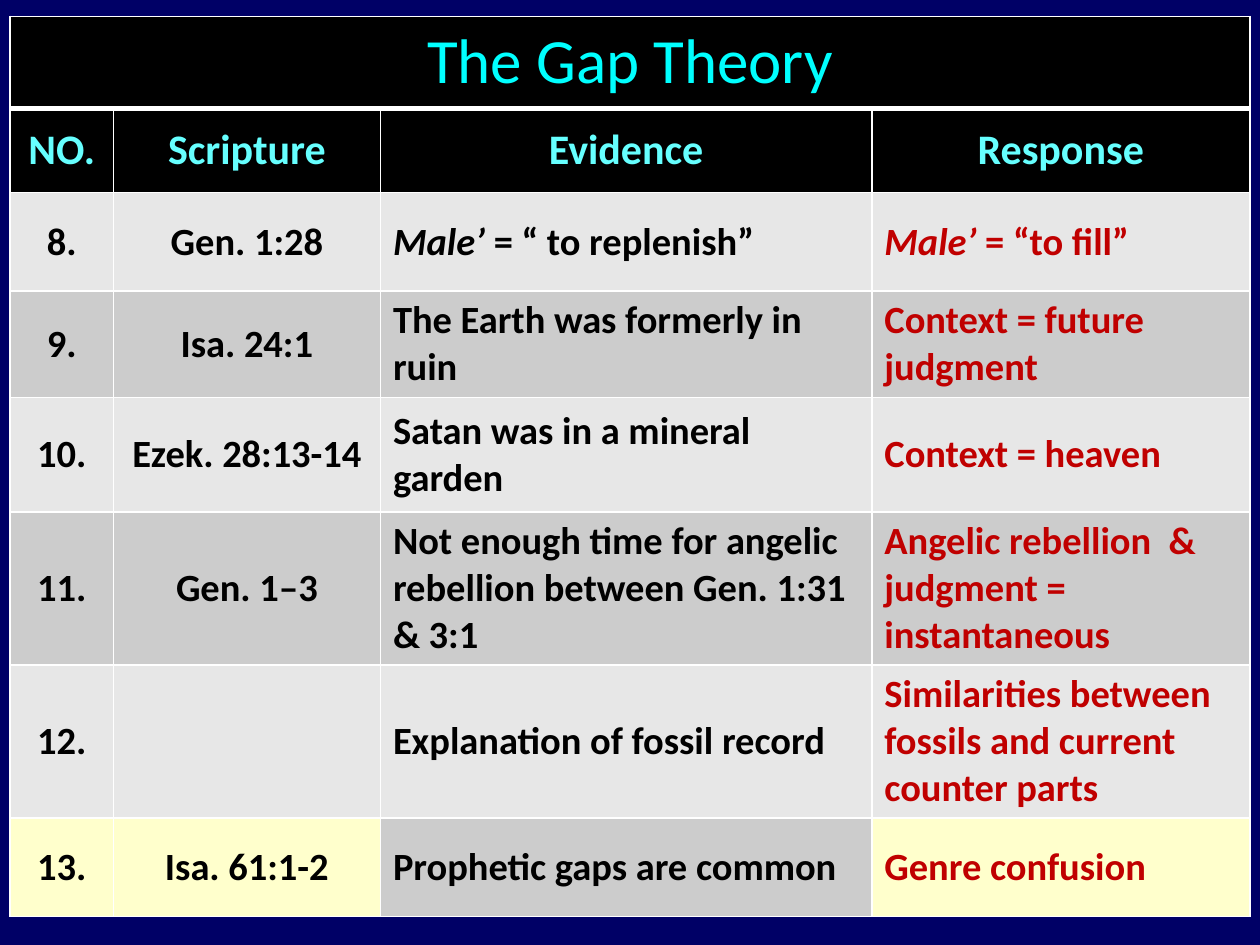
import pptx
import pptx.util
import pptx.dml.color
import pptx.enum.text
import lxml.etree
from pptx.oxml.ns import qn
from pptx.util import Inches, Pt

COLORS = {
    "background": "000066", "header": "000000", "title": "00FFFF",
    "heading": "66FFFF", "text": "000000", "response": "C00000",
    "light": "E7E7E7", "dark": "CCCCCC", "highlight": "FFFFCC", "border": "FFFFFF",
}
CENTER = pptx.enum.text.PP_ALIGN.CENTER
LEFT = pptx.enum.text.PP_ALIGN.LEFT


def rgb(name):
    return pptx.dml.color.RGBColor.from_string(COLORS[name])


def style_cell(cell, fill, top=1, bottom=1):
    """Fill the cell, centre it vertically and draw its four borders."""
    cell.fill.solid()
    cell.fill.fore_color.rgb = rgb(fill)
    cell.vertical_anchor = pptx.enum.text.MSO_ANCHOR.MIDDLE
    properties = cell._tc.get_or_add_tcPr()
    widths = {"a:lnL": 1, "a:lnR": 1, "a:lnT": top, "a:lnB": bottom}
    for position, (side, width) in enumerate(widths.items()):
        line = lxml.etree.Element(qn(side), w=str(Pt(width)))
        solid = lxml.etree.SubElement(line, qn("a:solidFill"))
        lxml.etree.SubElement(solid, qn("a:srgbClr"), val=COLORS["border"])
        properties.insert(position, line)


headings = ["NO.", "Scripture", "Evidence", "Response"]
# A cell given as a pair starts with an italic term
arguments = [
    ["8.", "Gen. 1:28", ("Male’", " = “ to replenish”"), ("Male’", " = “to fill”")],
    ["9.", "Isa. 24:1", "The Earth was formerly in ruin", "Context = future judgment"],
    ["10.", "Ezek. 28:13-14", "Satan was in a mineral garden", "Context = heaven"],
    ["11.", "Gen. 1‒3", "Not enough time for angelic rebellion between Gen. 1:31 & 3:1",
     "Angelic rebellion  & judgment = instantaneous"],
    ["12.", "", "Explanation of fossil record",
     "Similarities between fossils and current counter parts"],
    ["13.", "Isa. 61:1-2", "Prophetic gaps are common", "Genre confusion"],
]
column_widths = [0.82, 2.12, 3.9, 3]
row_heights = [0.73, 0.67, 0.78, 0.78, 0.91, 1.12, 1.12, 0.78]

# Slide and background
prs = pptx.Presentation()
prs.slide_width, prs.slide_height = Inches(10), Inches(7.5)
slide = prs.slides.add_slide(prs.slide_layouts[6])
slide.background.fill.solid()
slide.background.fill.fore_color.rgb = rgb("background")

# Table grid
gap_theory = slide.shapes.add_table(
    len(row_heights), len(column_widths), Inches(0.08), Inches(0.13),
    Inches(sum(column_widths)), Inches(sum(row_heights))).table
for column, width in zip(gap_theory.columns, column_widths):
    column.width = Inches(width)
for row, height in zip(gap_theory.rows, row_heights):
    row.height = Inches(height)

# Title row across all columns
for col in range(len(headings)):
    style_cell(gap_theory.cell(0, col), "header", bottom=3)
title_cell = gap_theory.cell(0, 0)
title_cell.merge(gap_theory.cell(0, len(headings) - 1))
title_cell.text = "The Gap Theory"
title = title_cell.text_frame.paragraphs[0]
title.alignment = CENTER
title.font.name, title.font.size, title.font.bold = "Calibri", Pt(36), False
title.font.color.rgb = rgb("title")

# Column headings and arguments
for row, texts in enumerate([headings] + arguments, start=1):
    is_heading = row == 1
    for col, text in enumerate(texts):
        cell = gap_theory.cell(row, col)
        if is_heading:
            fill, color = "header", "heading"
        else:
            fill = "light" if row % 2 == 0 else "dark"
            color = "response" if col == 3 else "text"
            if row == len(arguments) + 1 and col != 2:
                fill = "highlight"
        style_cell(cell, fill, top=3 if is_heading else 1)

        paragraph = cell.text_frame.paragraphs[0]
        paragraph.alignment = CENTER if is_heading or col < 2 else LEFT
        paragraph.font.name, paragraph.font.bold = "Calibri", True
        paragraph.font.size = Pt(24 if is_heading else 22)
        paragraph.font.color.rgb = rgb(color)
        if isinstance(text, tuple):
            term, meaning = text
            term_run = paragraph.add_run()
            term_run.text = term
            term_run.font.italic = True
            paragraph.add_run().text = meaning
        elif text:
            paragraph.add_run().text = text

prs.save("out.pptx")
